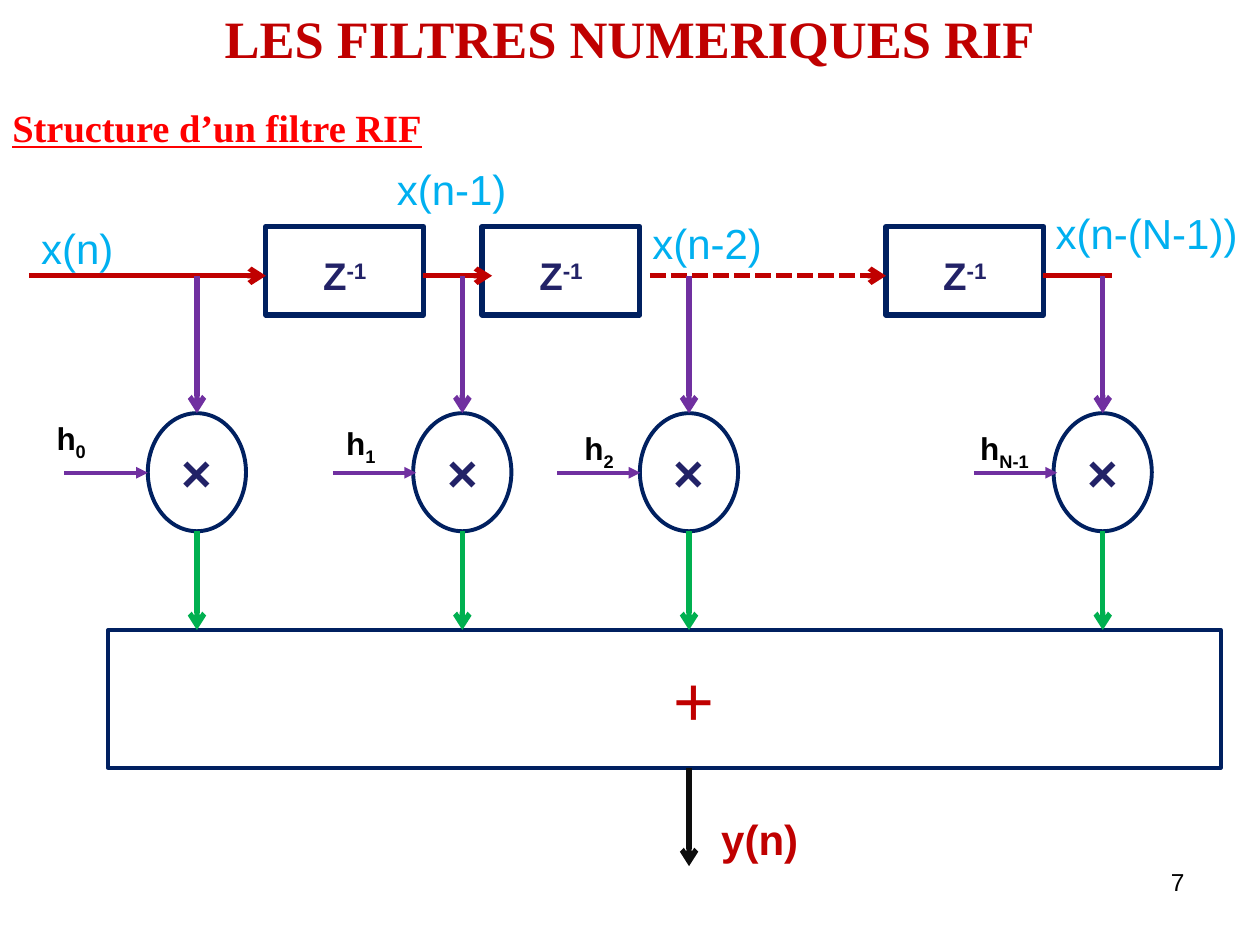
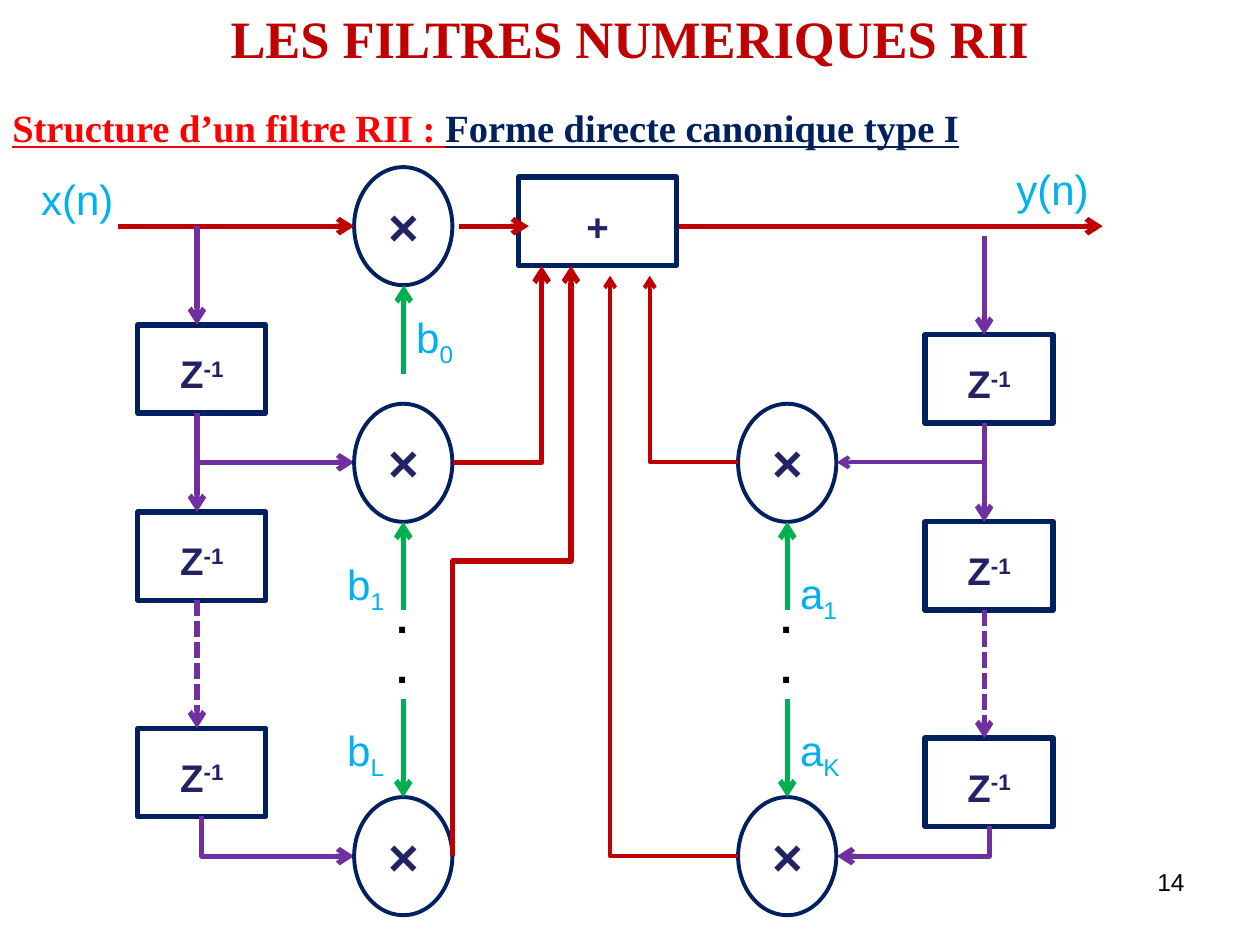
"""Builds two slides showing the block diagrams of FIR and IIR digital filters."""
import pptx
import pptx.dml.color
import pptx.enum.dml
import pptx.enum.shapes
import pptx.enum.text
import pptx.oxml.ns
import pptx.util
from lxml import etree

Cm = pptx.util.Cm
SHAPE = pptx.enum.shapes.MSO_SHAPE
LINK = pptx.enum.shapes.MSO_CONNECTOR
ALIGN = pptx.enum.text.PP_ALIGN


class Theme:
    colors = {"crimson": "C00000", "red": "FF0000", "navy": "002060", "indigo": "222267",
              "purple": "7030A0", "green": "00B050", "sky": "00B0F0", "ink": "000000",
              "output": "0D0D0D"}
    fonts = {
        "title": {"name": "Times New Roman", "size": 30, "bold": True, "color": "crimson"},
        "subtitle": {"name": "Times New Roman", "size": 22, "bold": True, "underline": True,
                     "color": "red"},
        "number": {"name": "Arial", "size": 14, "color": "ink"},
        "signal": {"name": "Arial", "size": 24, "color": "sky"},
        "output": {"name": "Arial", "size": 24, "bold": True, "color": "crimson"},
        "block": {"name": "Arial", "size": 22, "bold": True, "color": "indigo"},
        "times": {"name": "Arial", "size": 30, "bold": True, "color": "indigo"},
        "sum": {"name": "Arial", "size": 40, "color": "crimson"},
        "coefficient": {"name": "Arial", "size": 18, "bold": True, "color": "ink"},
        "dots": {"name": "Arial", "size": 24, "bold": True, "color": "ink"},
    }
    thick, thin = 3, 2.25


SUB, SUPER = {"baseline": -25000}, {"baseline": 30000}
DELAY = [("Z", {}), ("-1", SUPER)]
DELAY_HEIGHT = 1.78
MULTIPLIER_WIDTH, MULTIPLIER_HEIGHT = 1.98, 2.38

FIR = {
    "title": "LES FILTRES NUMERIQUES RIF",
    "subtitle": [("Structure d’un filtre RIF", {})],
    "number": "7",
    "signals": [("x(n)", 0.58, 4.37, 1.98), ("x(n-1)", 7.75, 3.18, 2.78),
                ("x(n-2)", 12.9, 4.27, 2.78), ("x(n-(N-1))", 21.03, 4.06, 4.37)],
    "delays": [5.36, 9.72, 17.86],
    "wires": [(0.58, 5.36, {}), (8.52, 9.92, {}), (13.1, 17.86, {"dashed": True}),
              (21.03, 22.42, {"head": None})],
    "taps": [(3.97, "0", 0.89, 8.33, 1.3), (9.32, "1", 6.73, 8.43, 6.71),
             (13.89, "2", 11.53, 8.53, 11.23), (22.23, "N-1", 19.51, 8.53, 19.63)],
}
IIR = {
    "title": "LES FILTRES NUMERIQUES RII",
    "subtitle": [("Structure d’un filtre RII : ", {}),
                 ("Forme directe canonique type I", {"color": "navy"})],
    "number": "14",
    "signals": [("x(n)", 0.58, 3.37), ("y(n)", 20.24, 3.18)],
    "coefficients": [("b", "0", 8.14, 6.15), ("b", "1", 6.75, 11.13), ("b", "L", 6.75, 14.48),
                     ("a", "1", 15.88, 11.31), ("a", "K", 15.88, 14.48)],
    "wires": [(2.38, 7.14), (9.25, 10.66), (13.69, 22.23)],
    "ladders": [{"delay": 2.78, "drop": 0, "multiplier": 7.14, "entry": 7.14, "tap": Theme.thick},
                {"delay": 18.65, "drop": 0.2, "multiplier": 14.88, "entry": 16.87,
                 "tap": Theme.thin}],
    "returns": [((9.13, 9.32), (10.92, 5.36), Theme.thick),
                ((14.88, 9.32), (13.1, 5.56), Theme.thin),
                ((14.88, 17.26), (12.3, 5.56), Theme.thin)],
}


def color(name):
    return pptx.dml.color.RGBColor.from_string(Theme.colors[name])


def fill_text(box, paragraphs, font, align):
    box.text_frame.word_wrap = True
    box.text_frame.vertical_anchor = pptx.enum.text.MSO_ANCHOR.TOP
    for index, spans in enumerate(paragraphs):
        para = box.text_frame.add_paragraph() if index else box.text_frame.paragraphs[0]
        para.alignment = align
        for words, changes in spans:
            span = para.add_run()
            span.text = words
            for key, value in {**Theme.fonts[font], **changes}.items():
                if key == "color":
                    span.font.color.rgb = color(value)
                elif key == "baseline":
                    span._r.get_or_add_rPr().set("baseline", str(value))
                else:
                    setattr(span.font, key, pptx.util.Pt(value) if key == "size" else value)


def add_label(page, area, spans, font, align=ALIGN.LEFT):
    box = page.shapes.add_textbox(*map(Cm, area))
    fill_text(box, [spans], font, align)


def add_block(page, kind, area, width):
    block = page.shapes.add_shape(kind, *map(Cm, area))
    block.shadow.inherit = False
    block.fill.background()
    block.line.color.rgb = color("navy")
    block.line.width = pptx.util.Pt(width)


def add_delay(page, left, top, width, spans=DELAY):
    add_block(page, SHAPE.RECTANGLE, (left, top, width, DELAY_HEIGHT), Theme.thick)
    add_label(page, (left, top + 0.39, width, 1.19), spans, "block", ALIGN.CENTER)


def add_multiplier(page, left, top):
    add_block(page, SHAPE.OVAL, (left, top, MULTIPLIER_WIDTH, MULTIPLIER_HEIGHT), Theme.thin)
    add_label(page, (left + 0.2, top + 0.41, 1.59, 1.54), [("×", {})], "times", ALIGN.CENTER)


def add_wire(page, start, end, hue, width=Theme.thick, head="arrow", dashed=False,
             bend=None, upright=False):
    if upright:
        (x1, y1), (x2, y2) = start, end
        middle_x, middle_y = (x1 + x2) / 2, (y1 + y2) / 2
        half_x, half_y = (x2 - x1) / 2, (y2 - y1) / 2
        start = middle_x - half_y, middle_y + half_x
        end = middle_x + half_y, middle_y - half_x
    kind = LINK.ELBOW if bend else LINK.STRAIGHT
    wire = page.shapes.add_connector(kind, *map(Cm, (*start, *end)))
    wire.line.color.rgb = color(hue)
    wire.line.width = pptx.util.Pt(width)
    if dashed:
        wire.line.dash_style = pptx.enum.dml.MSO_LINE.SQUARE_DOT
    qn = pptx.oxml.ns.qn
    properties = wire._element.spPr
    if upright:
        properties.find(qn("a:xfrm")).set("rot", "5400000")
    if bend:
        properties.find(qn("a:prstGeom")).set("prst", bend)
    if head:
        etree.SubElement(properties.find(qn("a:ln")), qn("a:tailEnd")).set("type", head)
    etree.SubElement(properties, qn("a:effectLst"))


def add_page(deck, content):
    page = deck.slides.add_slide(deck.slide_layouts[5])
    title = page.shapes.title
    frame = {"left": 0, "top": 0, "width": 25.4, "height": 1.54}
    for key, value in frame.items():
        setattr(title, key, Cm(value))
    fill_text(title, [[(content["title"], {})]], "title", ALIGN.CENTER)
    add_label(page, (0, 1.98, 25.4, 1.19), content["subtitle"], "subtitle")
    add_label(page, (18.2, 17.36, 5.93, 1.32), [(content["number"], {})], "number", ALIGN.RIGHT)
    return page


def draw_fir(deck):
    page = add_page(deck, FIR)
    line_y, multiplier_y, coefficient_y, sum_y = 5.56, 8.33, 9.53, 12.7
    for left in FIR["delays"]:
        add_delay(page, left, 4.57, 3.18)
    add_block(page, SHAPE.RECTANGLE, (2.18, sum_y, 22.43, 2.78), Theme.thin)
    add_label(page, (11.71, 13.11, 4.57, 1.96), [("+", {})], "sum", ALIGN.CENTER)
    for start, end, options in FIR["wires"]:
        add_wire(page, (start, line_y), (end, line_y), "crimson", **options)
    for center, index, left, top, start in FIR["taps"]:
        add_multiplier(page, center - MULTIPLIER_WIDTH / 2, multiplier_y)
        add_wire(page, (center, line_y), (center, multiplier_y), "purple")
        add_wire(page, (center, multiplier_y + MULTIPLIER_HEIGHT), (center, sum_y), "green")
        add_wire(page, (start, coefficient_y), (start + 1.68, coefficient_y), "purple",
                 Theme.thin, "triangle")
        add_label(page, (left, top, 2.16, 1.02), [("h", {}), (index, SUB)], "coefficient")
    for words, left, top, width in FIR["signals"]:
        add_label(page, (left, top, width, 1.28), [(words, {})], "signal")
    add_wire(page, (13.89, 15.48), (13.89, 17.46), "output")
    add_label(page, (14.29, 16.28, 2.38, 1.28), [("y(n)", {})], "output")


def draw_ladder(page, ladder):
    drop, wire_x = ladder["drop"], ladder["delay"] + 1.19
    start = 4.56 + drop
    for top, dashed in ((6.55, False), (10.32, False), (14.68, True)):
        add_delay(page, ladder["delay"], top + drop, 2.58)
        add_wire(page, (wire_x, start), (wire_x, top + drop), "purple", dashed=dashed)
        start = top + drop + DELAY_HEIGHT
    add_wire(page, (wire_x, 9.32), (ladder["entry"], 9.32), "purple", ladder["tap"])
    add_wire(page, (ladder["delay"] + 1.29, start), (ladder["entry"], 17.26), "purple",
             bend="bentConnector2", upright=True)
    center = ladder["multiplier"] + MULTIPLIER_WIDTH / 2
    for top, tail, tip in ((8.14, 12.3, 10.52), (16.07, 14.09, 16.07)):
        add_multiplier(page, ladder["multiplier"], top)
        add_wire(page, (center, tail), (center, tip), "green")
    dots = page.shapes.add_textbox(*map(Cm, (center - 0.39, 11.79, 0.79, 2.31)))
    fill_text(dots, [[(".", {})]] * 2, "dots", ALIGN.LEFT)


def draw_iir(deck):
    page = add_page(deck, IIR)
    add_delay(page, 10.46, 3.57, 3.18, [("+", {})])
    add_multiplier(page, 7.14, 3.37)
    add_wire(page, (8.14, 7.54), (8.14, 5.75), "green")
    for start, end in IIR["wires"]:
        add_wire(page, (start, 4.56), (end, 4.56), "crimson")
    for ladder in IIR["ladders"]:
        draw_ladder(page, ladder)
    for start, end, width in IIR["returns"]:
        add_wire(page, start, end, "crimson", width, bend="bentConnector2")
    add_wire(page, (9.13, 17.26), (11.51, 5.36), "crimson", bend="bentConnector3", upright=True)
    for words, left, top in IIR["signals"]:
        add_label(page, (left, top, 1.98, 1.28), [(words, {})], "signal")
    for letter, index, left, top in IIR["coefficients"]:
        add_label(page, (left, top, 1.98, 1.28), [(letter, {}), (index, SUB)], "signal")


def main():
    deck = pptx.Presentation()
    deck.slide_width, deck.slide_height = Cm(25.4), Cm(19.05)
    draw_fir(deck)
    draw_iir(deck)
    deck.save("out.pptx")


if __name__ == "__main__":
    main()
